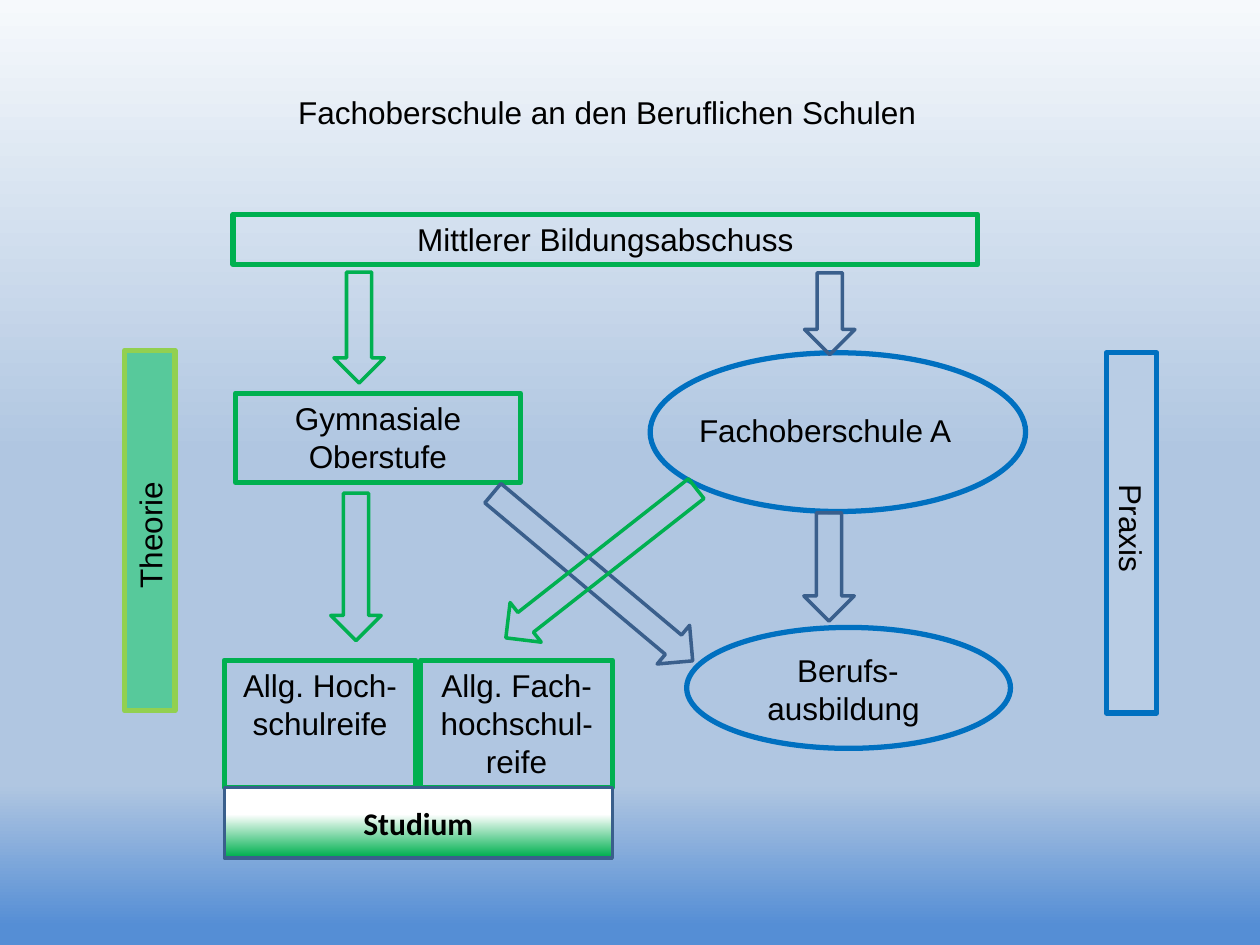
from dataclasses import dataclass

from lxml.etree import SubElement
from pptx import Presentation
from pptx.dml.color import RGBColor
from pptx.enum.shapes import MSO_SHAPE
from pptx.enum.text import MSO_ANCHOR, PP_ALIGN
from pptx.oxml.ns import qn
from pptx.util import Inches, Pt


@dataclass(frozen=True)
class Theme:
    font: str = "Arial"
    bold_font: str = "Calibri"
    size: int = 18
    text: str = "000000"
    green: str = "00B050"
    blue: str = "0070C0"
    steel: str = "3A5F8C"
    lime: str = "92D050"
    praxis: str = "B9CDE5"
    theorie: str = "57C99B"
    box_line: int = 3
    thin_line: int = 2
    sky: tuple = ((0, "F6F9FC"), (48, "B0C6E1"), (83, "B0C6E1"), (98, "558ED5"))
    studium: tuple = ((38, "FFFFFF"), (98, "00B050"))


THEME = Theme()


def set_gradient(fill, element, stops):
    fill.gradient()
    fill.gradient_angle = 270
    stop_list = element.xpath(".//a:gsLst")[0]
    for stop in list(stop_list):
        stop_list.remove(stop)
    for position, color in stops:
        stop = SubElement(stop_list, qn("a:gs"), pos=str(position * 1000))
        SubElement(stop, qn("a:srgbClr"), val=color)


def set_text(sp, text, align=PP_ALIGN.CENTER, anchor=MSO_ANCHOR.TOP, bold=False):
    tf = sp.text_frame
    tf.word_wrap = True
    tf.vertical_anchor = anchor
    p = tf.paragraphs[0]
    p.text = text
    p.alignment = align
    p.font.name = THEME.bold_font if bold else THEME.font
    p.font.size = Pt(THEME.size)
    p.font.bold = bold
    p.font.color.rgb = RGBColor.from_string(THEME.text)


def add_label(s, text, x, y, w, h, align=PP_ALIGN.CENTER):
    sp = s.shapes.add_textbox(Inches(x), Inches(y), Inches(w), Inches(h))
    set_text(sp, text, align)


def add_outline(s, kind, x, y, w, h, color, width=THEME.box_line, rotation=0):
    sp = s.shapes.add_shape(kind, Inches(x), Inches(y), Inches(w), Inches(h))
    sp.shadow.inherit = False
    sp.rotation = rotation
    sp.fill.background()
    sp.line.color.rgb = RGBColor.from_string(color)
    sp.line.width = Pt(width)
    return sp


def add_box(s, text, x, y, w, h):
    sp = add_outline(s, MSO_SHAPE.RECTANGLE, x, y, w, h, THEME.green)
    set_text(sp, text)


def add_side_bar(s, text, x, y, fill, line, rotation):
    sp = add_outline(s, MSO_SHAPE.RECTANGLE, x, y, 2.86, 0.4, line, rotation=rotation)
    sp.fill.solid()
    sp.fill.fore_color.rgb = RGBColor.from_string(fill)
    set_text(sp, text)


def add_arrow(s, x, y, length, color, rotation=90):
    add_outline(s, MSO_SHAPE.RIGHT_ARROW, x, y, length, 0.4, color,
                THEME.thin_line, rotation)


def add_studium(s):
    sp = add_outline(s, MSO_SHAPE.RECTANGLE, 1.78, 6.25, 3.08, 0.56,
                     THEME.steel, THEME.thin_line)
    set_gradient(sp.fill, sp.element, THEME.studium)
    set_text(sp, "Studium", anchor=MSO_ANCHOR.MIDDLE, bold=True)


def main():
    prs = Presentation()
    prs.slide_width, prs.slide_height = Inches(10), Inches(7.5)
    s = prs.slides.add_slide(prs.slide_layouts[6])
    set_gradient(s.background.fill, s.element, THEME.sky)

    add_label(s, "Fachoberschule an den Beruflichen Schulen", 1.12, 0.69, 7.4, 0.4)
    add_box(s, "Mittlerer Bildungsabschuss", 1.85, 1.7, 5.91, 0.4)
    add_box(s, "Gymnasiale Oberstufe", 1.87, 3.12, 2.26, 0.71)
    add_box(s, "Allg. Hoch-schulreife", 1.78, 5.24, 1.52, 1.01)
    add_label(s, "Berufs-\nausbildung ", 5.58, 5.12, 2.3, 0.71)
    add_label(s, "Fachoberschule A", 5.45, 3.21, 2.26, 0.4, PP_ALIGN.LEFT)
    add_outline(s, MSO_SHAPE.OVAL, 5.16, 2.8, 2.98, 1.26, THEME.blue)
    add_side_bar(s, "Praxis ", 7.55, 4.03, THEME.praxis, THEME.blue, 90)
    add_side_bar(s, "Theorie ", -0.24, 4.01, THEME.theorie, THEME.lime, 270)

    add_arrow(s, 6.26, 2.29, 0.65, THEME.steel)
    add_arrow(s, 6.15, 4.3, 0.86, THEME.steel)
    add_arrow(s, 2.24, 4.3, 1.17, THEME.green)
    add_arrow(s, 2.41, 2.4, 0.88, THEME.green)
    add_arrow(s, 3.67, 4.38, 2.07, THEME.steel, 40)
    add_arrow(s, 3.81, 4.27, 1.92, THEME.green, 141.9)

    add_outline(s, MSO_SHAPE.OVAL, 5.45, 4.98, 2.57, 0.96, THEME.blue)
    add_box(s, "Allg. Fach-hochschul-reife", 3.34, 5.24, 1.52, 1.01)
    add_studium(s)

    prs.save("out.pptx")


if __name__ == "__main__":
    main()
